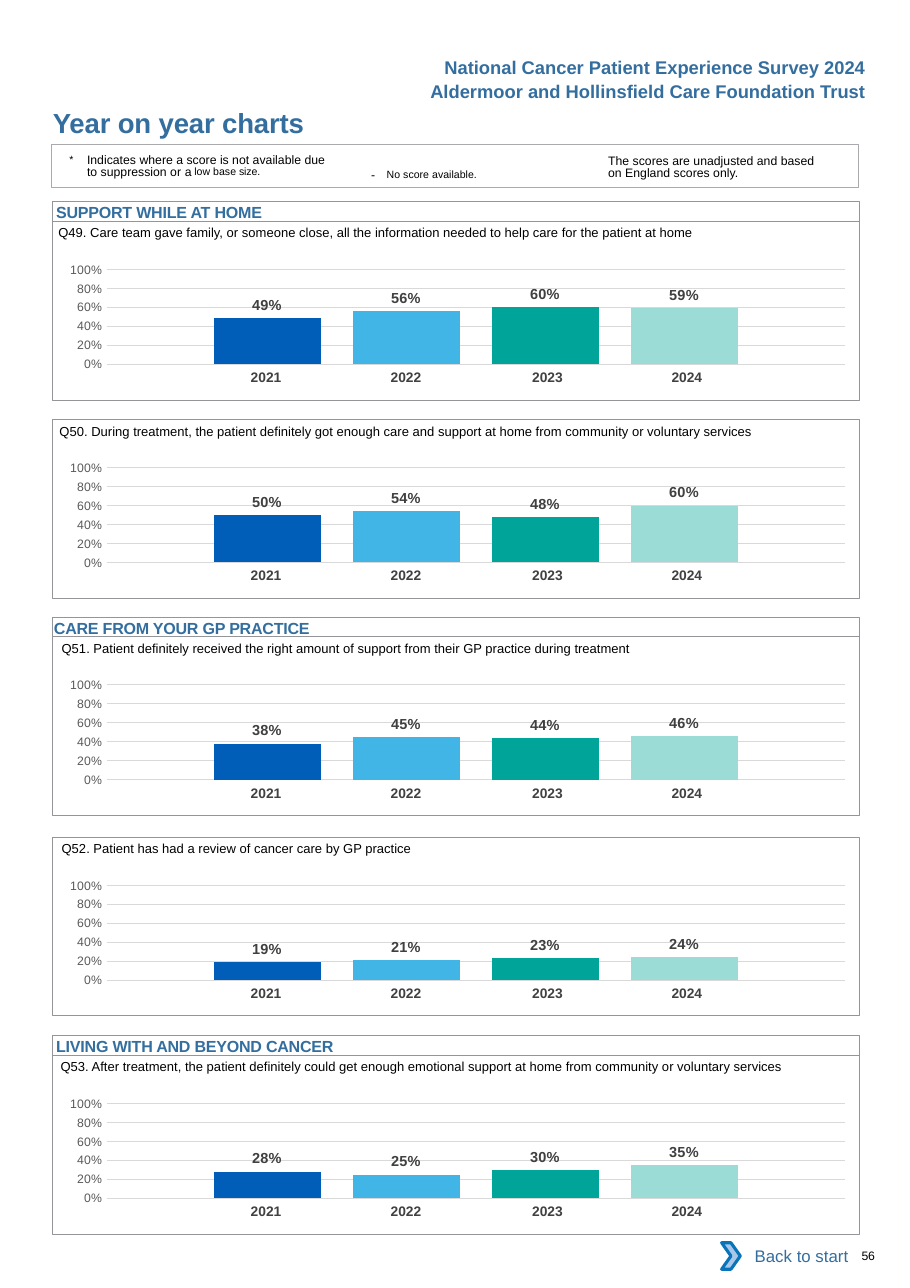
"""Year on year survey page: five column charts in three titled sections."""
from lxml.etree import SubElement
from pptx import Presentation
from pptx.chart.data import CategoryChartData
from pptx.dml.color import RGBColor
from pptx.enum.chart import XL_CHART_TYPE, XL_LABEL_POSITION, XL_TICK_MARK
from pptx.enum.shapes import MSO_SHAPE
from pptx.enum.text import MSO_ANCHOR, PP_ALIGN
from pptx.oxml import parse_xml
from pptx.oxml.ns import nsdecls, qn
from pptx.util import Inches, Pt

COLORS = {"heading": "336E9F", "text": "000000", "frame": "939598", "note": "A9AAAD",
          "year": "414042", "label": "404040", "axis": "595959", "grid": "D9D9D9",
          "arrow": "A8C7E9", "arrow_line": "0A74BB", "white": "FFFFFF"}
YEARS = {"2021": "005EB8", "2022": "41B6E6", "2023": "00A499", "2024": "9CDCD7"}
HEADERS = ["National Cancer Patient Experience Survey 2024",
           "Aldermoor and Hollinsfield Care Foundation Trust"]
PANELS = [
    (2.01, "SUPPORT WHILE AT HOME", 0.03, 0.53,
     "Q49. Care team gave family, or someone close, all the information needed to help "
     "care for the patient at home", (0.49, 0.56, 0.60, 0.59)),
    (3.81, None, 0, 0.54,
     "Q50. During treatment, the patient definitely got enough care and support at home "
     "from community or voluntary services", (0.50, 0.54, 0.48, 0.60)),
    (5.78, "CARE FROM YOUR GP PRACTICE", 0.01, 0.56,
     "Q51. Patient definitely received the right amount of support from their GP practice "
     "during treatment", (0.38, 0.45, 0.44, 0.46)),
    (7.60, None, 0, 0.56,
     "Q52. Patient has had a review of cancer care by GP practice",
     (0.19, 0.21, 0.23, 0.24)),
    (9.58, "LIVING WITH AND BEYOND CANCER", 0.03, 0.55,
     "Q53. After treatment, the patient definitely could get enough emotional support at "
     "home from community or voluntary services", (0.28, 0.25, 0.30, 0.35)),
]
NOTES = [
    (0.63, 1.38, 2.42, 0.16, [("*\t", 12, 0, 3), ("Indicates where a score is not available due "
     "to suppression or ", 8, 0, 0), ("a ", 8, -0.5, 0), ("low base", 12, 0, 7),
     (" size.", 12, -0.1, 7)]),
    (3.37, 1.52, 1.63, 0, [("- ", 8, 2.6, 0), ("No score available.", 12, 0, 3)]),
    (5.52, 1.38, 2.01, 0, [("The scores are unadjusted and based on England scores only.",
     8, 0, 0)]),
]
LEFT, WIDTH = 0.48, 7.32
BOX_H, BAR_H, CHART_H = 1.62, 0.18, 1.29
PLOT = {"x": 0.079, "y": 0.145, "w": 0.915, "h": 0.666}
COLUMNS = [(1.27, 0), (1.27, 0), (1.34, 0.04), (1.27, 0.12)]
NO_STYLE = "{2D5ABB26-0587-4C30-8999-92F81FD0307C}"


def rgb(name):
    return RGBColor.from_string(COLORS.get(name, name))


def set_font(font, size, color, bold=False):
    font.name, font.size, font.bold = "Arial", Pt(size), bold
    font.color.rgb = rgb(color)


def add_runs(tf, runs, color, bold=False, align=PP_ALIGN.LEFT):
    p = tf.paragraphs[0]
    p.alignment = align
    for text, size, spacing, raised in runs:
        r = p.add_run()
        r.text = text
        set_font(r.font, size, color, bold)
        rPr = r._r.get_or_add_rPr()
        if spacing:
            rPr.set("spc", str(round(spacing * 100)))
        if raised:
            rPr.set("baseline", str(raised * 1000))
    return p


def set_insets(tf, left=0, top=0, right=0):
    tf.margin_left, tf.margin_top, tf.margin_right = Inches(left), Inches(top), Inches(right)
    tf.margin_bottom = 0


def add_text(slide, at, runs, color="text", bold=False, align=PP_ALIGN.LEFT, wrap=True):
    tf = slide.shapes.add_textbox(*map(Inches, at)).text_frame
    tf.word_wrap = wrap
    set_insets(tf)
    return add_runs(tf, runs, color, bold, align)


def add_box(slide, at, kind=MSO_SHAPE.RECTANGLE, fill=None, line=None, width=0.5):
    sp = slide.shapes.add_shape(kind, *map(Inches, at))
    sp.shadow.inherit = False
    if fill:
        sp.fill.solid()
        sp.fill.fore_color.rgb = rgb(fill)
    else:
        sp.fill.background()
    if line:
        sp.line.color.rgb = rgb(line)
        sp.line.width = Pt(width)
    else:
        sp.line.fill.background()
    return sp


def add_years(slide, top):
    total = sum(width for width, _ in COLUMNS)
    frame = slide.shapes.add_table(1, len(COLUMNS), *map(Inches, (1.73, top, total, 0.27)))
    table = frame.table
    table.first_row = table.horz_banding = False
    table._tbl.tblPr.find(qn("a:tableStyleId")).text = NO_STYLE
    table.rows[0].height = Inches(0.27)
    for i, (year, (width, right)) in enumerate(zip(YEARS, COLUMNS)):
        table.columns[i].width = Inches(width)
        cell = table.cell(0, i)
        cell.fill.background()
        cell.margin_right = Inches(right)
        add_runs(cell.text_frame, [(year, 9, 0, 0)], "year", True, PP_ALIGN.CENTER)


def add_columns(slide, top, values):
    data = CategoryChartData(number_format="0%")
    data.categories = ["1"]
    for year, value in zip(YEARS, values):
        data.add_series(year, [value])
    at = map(Inches, (0.39, top, WIDTH, CHART_H))
    chart = slide.shapes.add_chart(XL_CHART_TYPE.COLUMN_CLUSTERED, *at, data).chart
    chart.has_legend = chart.has_title = False
    set_font(chart.font, 8, "axis")
    chart.category_axis.visible = False
    axis = chart.value_axis
    axis.minimum_scale, axis.maximum_scale, axis.major_unit = 0, 1, 0.2
    axis.major_tick_mark = axis.minor_tick_mark = XL_TICK_MARK.NONE
    axis.format.line.fill.background()
    axis.major_gridlines.format.line.color.rgb = rgb("grid")
    axis.major_gridlines.format.line.width = Pt(0.75)
    axis.tick_labels.number_format = "0%"
    axis.tick_labels.number_format_is_linked = False
    set_font(axis.tick_labels.font, 8, "axis")
    plot = chart.plots[0]
    plot.gap_width, plot.overlap, plot.vary_by_categories = 200, -30, False
    for series, color in zip(plot.series, YEARS.values()):
        series.format.fill.solid()
        series.format.fill.fore_color.rgb = rgb(color)
        labels = series.data_labels
        labels.show_value = True
        labels.position = XL_LABEL_POSITION.OUTSIDE_END
        labels.number_format, labels.number_format_is_linked = "0%", False
        set_font(labels.font, 9.5, "label", True)
    area = chart._chartSpace.chart.plotArea
    for old in area.findall(qn("c:layout")):
        area.remove(old)
    layout = parse_xml(f"<c:layout {nsdecls('c')}><c:manualLayout/></c:layout>")
    settings = {"layoutTarget": "inner", "xMode": "edge", "yMode": "edge", **PLOT}
    for tag, value in settings.items():
        SubElement(layout[0], qn(f"c:{tag}")).set("val", str(value))
    area.insert(0, layout)
    chart._chartSpace.chart.addnext(parse_xml(
        f"<c:spPr {nsdecls('c', 'a')}><a:noFill/><a:ln><a:noFill/></a:ln></c:spPr>"))


def main():
    prs = Presentation()
    prs.slide_width, prs.slide_height = Inches(8.26), Inches(11.69)
    slide = prs.slides.add_slide(prs.slide_layouts[6])
    for i, header in enumerate(HEADERS):
        add_text(slide, (3.36, 0.51 + 0.22 * i, 4.5, 0.2), [(header, 12, 0, 0)],
                 "heading", True, PP_ALIGN.RIGHT, False)
    add_text(slide, (LEFT, 0.96, 4.5, 0.3), [("Year on year charts", 18, -0.1, 0)],
             "heading", True)
    add_box(slide, (LEFT - 0.01, 1.31, WIDTH, 0.39), line="note", width=0.75)
    for left, top, width, indent, runs in NOTES:
        p = add_text(slide, (left, top + 0.03, width, 0.24), runs)
        p.line_spacing = Pt(8.1)
        if indent:
            pPr = p._p.get_or_add_pPr()
            pPr.set("marL", str(Inches(indent)))
            pPr.set("indent", str(-Inches(indent)))
    for top, section, inset, question_left, question, values in PANELS:
        if section:
            bar = add_box(slide, (LEFT, top - BAR_H, WIDTH, BAR_H), line="frame")
            tf = bar.text_frame
            tf.vertical_anchor = MSO_ANCHOR.TOP
            set_insets(tf, inset, 0.01)
            add_runs(tf, [(section, 10.5, -0.1, 0)], "heading", True)
        add_text(slide, (question_left, top + 0.03, 7.2, 0.15), [(question, 8.5, 0, 0)])
        add_years(slide, top + 1.3)
        add_columns(slide, top + 0.25, values)
        add_box(slide, (LEFT, top, WIDTH, BOX_H), line="frame")
    back = add_box(slide, (6.62, 11.21, 1.18, 0.38), fill="white")
    add_runs(back.text_frame, [("Back to start", 11, 0, 0)], "heading", align=PP_ALIGN.RIGHT)
    add_box(slide, (6.55, 11.28, 0.17, 0.24), MSO_SHAPE.CHEVRON, "arrow", "arrow_line", 2)
    add_text(slide, (7.82, 11.33, 0.4, 0.13), [("56", 8, -0.2, 0)])
    prs.save("out.pptx")


if __name__ == "__main__":
    main()
